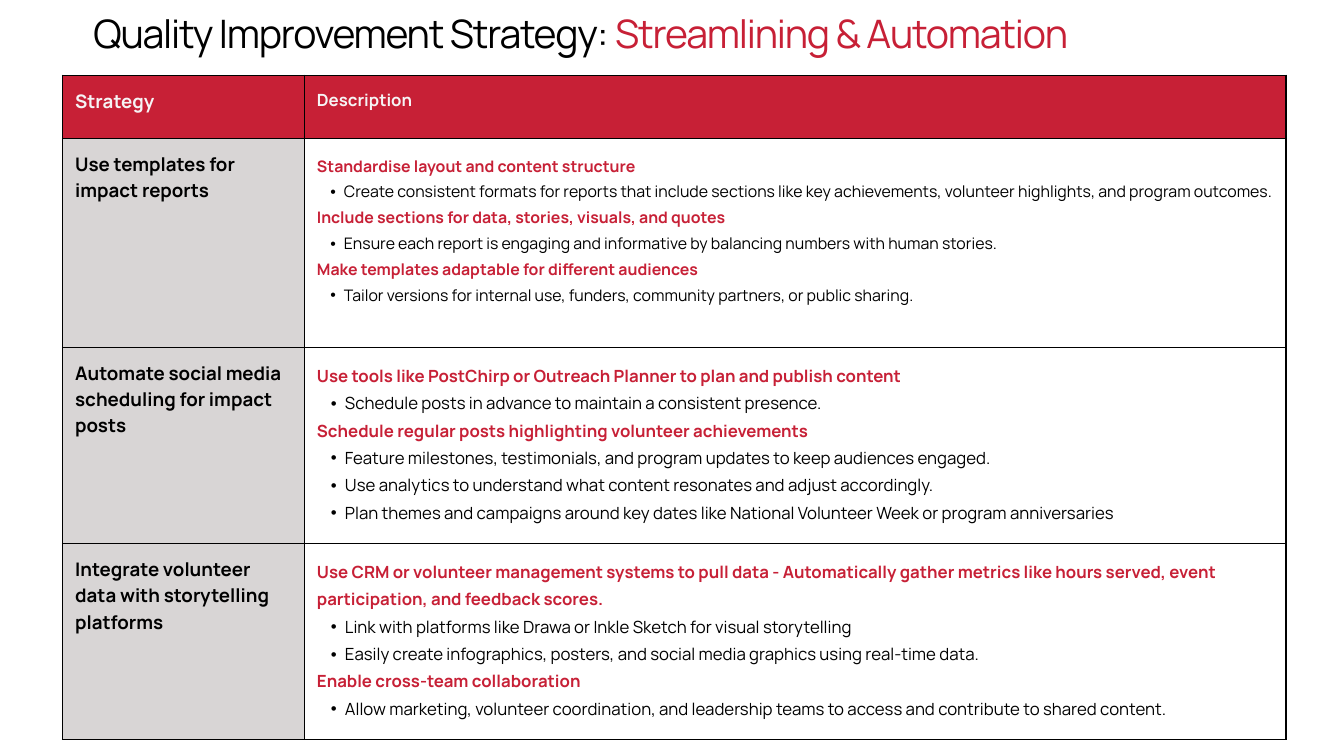
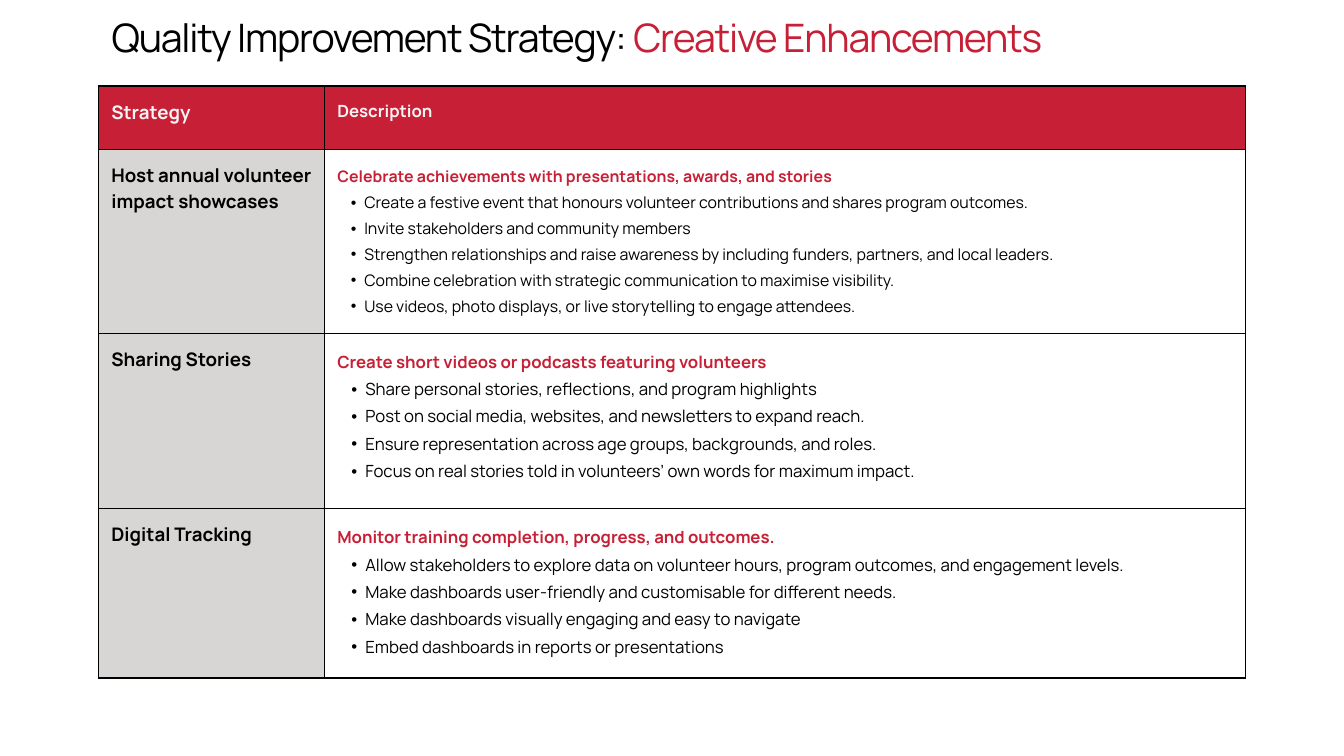
from pptx import Presentation
from pptx.dml.color import RGBColor as Rgb
from pptx.enum.text import MSO_ANCHOR as Anchor, MSO_AUTO_SIZE as Fit, PP_ALIGN as Align
from pptx.oxml.ns import qn
from pptx.util import Cm, Pt
from lxml.etree import SubElement as Sub

# Shared look
FONT = "Manrope"
RED = Rgb(0xC7, 0x20, 0x36)
GREY = Rgb(0xD8, 0xD5, 0xD5)
PALE = Rgb(0xF6, 0xF4, 0xF5)
BLACK = Rgb(0, 0, 0)
WHITE = Rgb(0xFF, 0xFF, 0xFF)
PAD = Cm(0.48)
HEAD_H = 2.39
LEADS = {17: 27.7, 18: 29.3}    # line spacing by text size
INDENTS = {17: 0.51, 18: 0.53}  # bullet step by text size
LEAD_IN = "Quality Improvement Strategy: "
HEADS = (("Strategy", 20, 28), ("Description", 18, 25.2))

# Content: each row is strategy, height, text size, then (point, bullets) pairs
SLIDES = [
    {
        "topic": "Streamlining & Automation",
        "title": (3.53, -0.1, 42.01, 2.24),
        "corner": (2.36, 2.84),
        "cols": (9.14, 37.11),
        "rows": [
            ("Use templates for impact reports", 7.9, 17, [
                ("Standardise layout and content structure", [
                    "Create consistent formats for reports that include sections like "
                    "key achievements, volunteer highlights, and program outcomes."]),
                ("Include sections for data, stories, visuals, and quotes", [
                    "Ensure each report is engaging and informative by balancing "
                    "numbers with human stories."]),
                ("Make templates adaptable for different audiences", [
                    "Tailor versions for internal use, funders, community partners, "
                    "or public sharing."]),
            ]),
            ("Automate social media scheduling for impact posts", 7.42, 18, [
                ("Use tools like PostChirp or Outreach Planner to plan and publish content", [
                    "Schedule posts in advance to maintain a consistent presence."]),
                ("Schedule regular posts highlighting volunteer achievements", [
                    "Feature milestones, testimonials, and program updates to keep "
                    "audiences engaged.",
                    "Use analytics to understand what content resonates and adjust "
                    "accordingly.",
                    "Plan themes and campaigns around key dates like National "
                    "Volunteer Week or program anniversaries"]),
            ]),
            ("Integrate volunteer data with storytelling platforms", 7.42, 18, [
                ("Use CRM or volunteer management systems to pull data - Automatically "
                 "gather metrics like hours served, event participation, and feedback "
                 "scores.", [
                    "Link with platforms like Drawa or Inkle Sketch for visual storytelling",
                    "Easily create infographics, posters, and social media graphics "
                    "using real-time data."]),
                ("Enable cross-team collaboration", [
                    "Allow marketing, volunteer coordination, and leadership teams to "
                    "access and contribute to shared content."]),
            ]),
        ],
    },
    {
        "topic": "Creative Enhancements",
        "title": (4.22, 0.05, 42.34, 2.24),
        "corner": (3.73, 3.25),
        "cols": (8.54, 34.8),
        "rows": [
            ("Host annual volunteer impact showcases", 6.96, 17, [
                ("Celebrate achievements with presentations, awards, and stories", [
                    "Create a festive event that honours volunteer contributions and "
                    "shares program outcomes.",
                    "Invite stakeholders and community members",
                    "Strengthen relationships and raise awareness by including "
                    "funders, partners, and local leaders.",
                    "Combine celebration with strategic communication to maximise "
                    "visibility.",
                    "Use videos, photo displays, or live storytelling to engage "
                    "attendees."]),
            ]),
            ("Sharing Stories", 6.63, 18, [
                ("Create short videos or podcasts featuring volunteers", [
                    "Share personal stories, reflections, and program highlights",
                    "Post on social media, websites, and newsletters to expand reach.",
                    "Ensure representation across age groups, backgrounds, and roles.",
                    "Focus on real stories told in volunteers’ own words for maximum "
                    "impact."]),
            ]),
            ("Digital Tracking", 6.4, 18, [
                ("Monitor training completion, progress, and outcomes.", [
                    "Allow stakeholders to explore data on volunteer hours, program "
                    "outcomes, and engagement levels.",
                    "Make dashboards user-friendly and customisable for different needs.",
                    "Make dashboards visually engaging and easy to navigate",
                    "Embed dashboards in reports or presentations"]),
            ]),
        ],
    },
]


def add_run(para, text, size, color, bold=False):
    run = para.add_run()
    run.text = text
    font = run.font
    font.name, font.size, font.bold = FONT, Pt(size), bold
    font.color.rgb = color
    return run


def add_para(frame, lead):
    # Fill the first, still empty paragraph before adding more
    first = frame.paragraphs[0]
    para = frame.add_paragraph() if first.runs else first
    para.line_spacing = Pt(lead)
    para.alignment = Align.LEFT
    return para


def add_bullet(frame, text, size):
    para = add_para(frame, LEADS[size])
    para.level = 1
    props = para._p.get_or_add_pPr()
    step = Cm(INDENTS[size])
    props.set("marL", str(2 * step))
    props.set("indent", str(-step))
    Sub(props, qn("a:buFont"), typeface="Arial")
    Sub(props, qn("a:buChar"), char="•")
    add_run(para, text, size, BLACK)


def style_cell(cell, color):
    cell.margin_left = cell.margin_right = PAD
    cell.margin_top = cell.margin_bottom = PAD
    cell.vertical_anchor = Anchor.TOP
    props = cell._tc.get_or_add_tcPr()
    for side in "LRTB":
        line = Sub(props, qn(f"a:ln{side}"), w=str(Pt(1.5)))
        paint = Sub(line, qn("a:solidFill"))
        Sub(paint, qn("a:srgbClr"), val=str(BLACK))
    cell.fill.solid()
    cell.fill.fore_color.rgb = color
    return cell.text_frame


def add_title(slide, topic, box):
    title = slide.shapes.title
    title.left, title.top, title.width, title.height = map(Cm, box)
    frame = title.text_frame
    frame.margin_left = frame.margin_right = 0
    frame.margin_top = frame.margin_bottom = 0
    frame.word_wrap = True
    frame.auto_size = Fit.NONE
    frame.vertical_anchor = Anchor.TOP
    para = add_para(frame, 63)
    for text, color in ((LEAD_IN, BLACK), (topic, RED)):
        run = add_run(para, text, 42, color)
        run._r.get_or_add_rPr().set("spc", "-130")


def add_grid(slide, corner, cols, rows):
    highs = [HEAD_H] + [row[1] for row in rows]
    size = (sum(cols), sum(highs))
    grid = slide.shapes.add_table(len(highs), len(cols), *map(Cm, corner + size)).table
    for col, wide in zip(grid.columns, cols):
        col.width = Cm(wide)
    for row, high in zip(grid.rows, highs):
        row.height = Cm(high)

    # Header row
    for col, (text, pts, lead) in enumerate(HEADS):
        frame = style_cell(grid.cell(0, col), RED)
        add_run(add_para(frame, lead), text, pts, PALE, True)

    # Strategy rows
    for at, (name, _, pts, points) in enumerate(rows, 1):
        frame = style_cell(grid.cell(at, 0), GREY)
        add_run(add_para(frame, 28), name, 20, BLACK, True)
        frame = style_cell(grid.cell(at, 1), WHITE)
        for point, items in points:
            add_run(add_para(frame, LEADS[pts]), point, pts, RED, True)
            for item in items:
                add_bullet(frame, item, pts)


def main():
    deck = Presentation()
    deck.slide_width, deck.slide_height = Cm(50.8), Cm(28.58)
    for data in SLIDES:
        slide = deck.slides.add_slide(deck.slide_layouts[5])
        add_title(slide, data["topic"], data["title"])
        add_grid(slide, data["corner"], data["cols"], data["rows"])
    deck.save("out.pptx")


if __name__ == "__main__":
    main()
